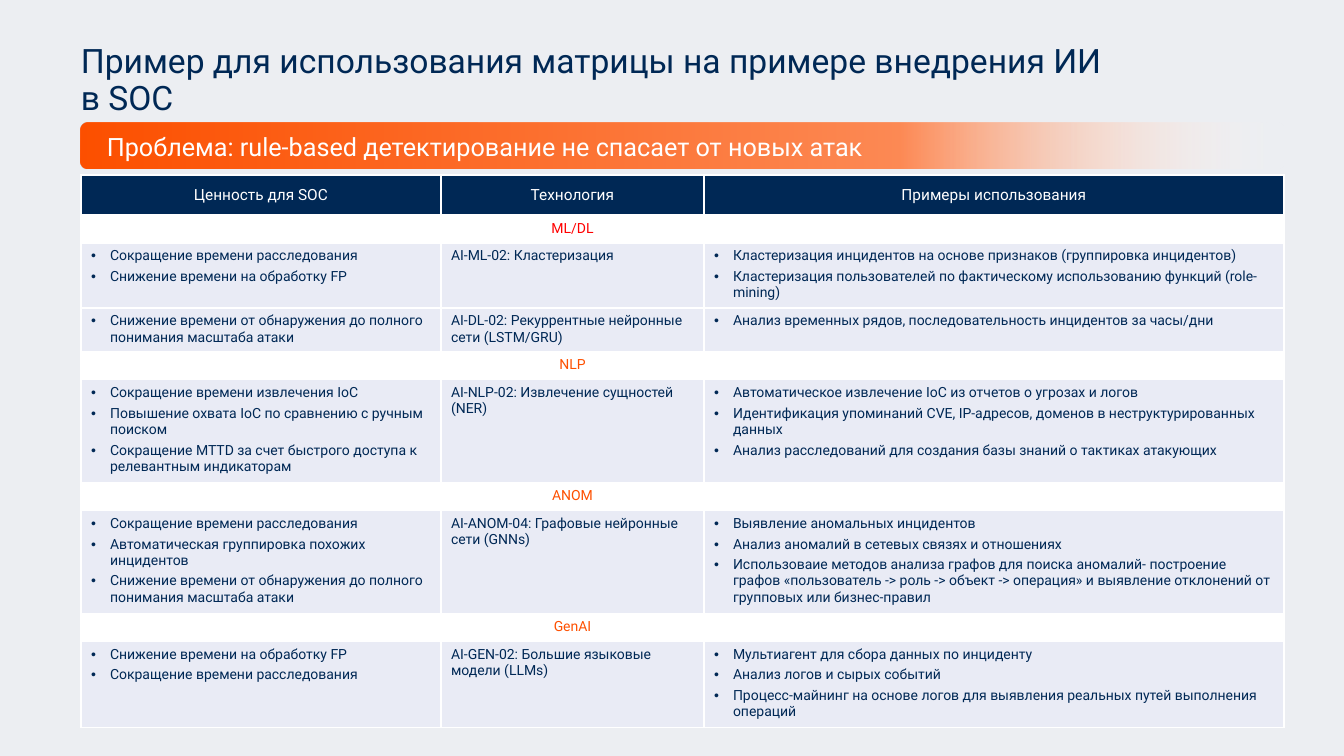
from dataclasses import dataclass

from lxml.etree import SubElement
from pptx import Presentation
from pptx.dml.color import RGBColor
from pptx.enum.shapes import MSO_SHAPE
from pptx.enum.text import MSO_ANCHOR, PP_ALIGN
from pptx.oxml.ns import qn
from pptx.util import Emu, Pt

EMU_PER_PX = 12192000 / 1344


@dataclass(frozen=True)
class Theme:
    font: str = "Roboto"
    page: str = "ECEEF2"
    navy: str = "002855"
    orange: str = "FE5000"
    peach: str = "FE8A55"
    red: str = "FF0000"
    white: str = "FFFFFF"
    row: str = "E9EBF5"
    title_size: int = 24
    banner_size: int = 18
    header_size: int = 11
    body_size: int = 10


THEME = Theme()

TITLE = "Пример для использования матрицы на примере внедрения ИИ в SOC"
PROBLEM = "Проблема: rule-based детектирование не спасает от новых атак"
HEADERS = ["Ценность для SOC", "Технология", "Примеры использования"]

# Each section: label, label colour, rows of (values, technology, examples)
SECTIONS = [
    ("ML/DL", THEME.red, [
        (["Сокращение времени расследования",
          "Снижение времени на обработку FP"],
         "AI-ML-02: Кластеризация",
         ["Кластеризация инцидентов на основе признаков (группировка инцидентов)",
          "Кластеризация пользователей по фактическому использованию функций (role-mining)"]),
        (["Снижение времени от обнаружения до полного понимания масштаба атаки"],
         "AI-DL-02: Рекуррентные нейронные сети (LSTM/GRU)",
         ["Анализ временных рядов, последовательность инцидентов за часы/дни"]),
    ]),
    ("NLP", THEME.orange, [
        (["Сокращение времени извлечения IoC",
          "Повышение охвата IoC по сравнению с ручным поиском",
          "Сокращение MTTD за счет быстрого доступа к релевантным индикаторам"],
         "AI-NLP-02: Извлечение сущностей (NER)",
         ["Автоматическое извлечение IoC из отчетов о угрозах и логов",
          "Идентификация упоминаний CVE, IP-адресов, доменов в неструктурированных данных",
          "Анализ расследований для создания базы знаний о тактиках атакующих"]),
    ]),
    ("ANOM", THEME.orange, [
        (["Сокращение времени расследования",
          "Автоматическая группировка похожих инцидентов",
          "Снижение времени от обнаружения до полного понимания масштаба атаки"],
         "AI-ANOM-04: Графовые нейронные сети (GNNs)",
         ["Выявление аномальных инцидентов",
          "Анализ аномалий в сетевых связях и отношениях",
          "Использоваие методов анализа графов для поиска аномалий- построение графов "
          "«пользователь -> роль -> объект -> операция» и выявление отклонений от "
          "групповых или бизнес-правил"]),
    ]),
    ("GenAI", THEME.orange, [
        (["Снижение времени на обработку FP",
          "Сокращение времени расследования"],
         "AI-GEN-02: Большие языковые модели (LLMs)",
         ["Мультиагент для сбора данных по инциденту",
          "Анализ логов и сырых событий",
          "Процесс-майнинг на основе логов для выявления реальных путей выполнения операций"]),
    ]),
]
COLUMN_WIDTHS = [360, 263, 580]
ROW_HEIGHTS = [41, 27, 65, 43, 28, 103, 28, 101, 28, 85]


def px(value):
    return Emu(round(value * EMU_PER_PX))


def rgb(color):
    return RGBColor.from_string(color)


def format_text(frame, size, color):
    for para in frame.paragraphs:
        for span in para.runs:
            span.font.name = THEME.font
            span.font.size = Pt(size)
            span.font.bold = False
            span.font.color.rgb = rgb(color)


def add_label(page, left, top, width, height, text, size, color):
    box = page.shapes.add_textbox(px(left), px(top), px(width), px(height))
    frame = box.text_frame
    frame.word_wrap = True
    frame.text = text
    format_text(frame, size, color)
    return box


def add_banner(page, left, top, width, height):
    banner = page.shapes.add_shape(
        MSO_SHAPE.ROUNDED_RECTANGLE, px(left), px(top), px(width), px(height))
    banner.adjustments[0] = 0.15
    banner.shadow.inherit = False
    banner.line.fill.background()
    banner.fill.gradient()
    banner.fill.gradient_angle = 0
    # Three stops, the last one transparent
    stops = banner._element.spPr.find(qn("a:gradFill")).find(qn("a:gsLst"))
    for stop in list(stops):
        stops.remove(stop)
    for percent, color, alpha in [(0, THEME.orange, 100), (68, THEME.peach, 100),
                                  (100, THEME.white, 0)]:
        stop = SubElement(stops, qn("a:gs"), pos=str(percent * 1000))
        tint = SubElement(stop, qn("a:srgbClr"), val=color)
        SubElement(tint, qn("a:alpha"), val=str(alpha * 1000))


def style_cell(cell, fill, top=1, bottom=1):
    properties = cell._tc.get_or_add_tcPr()
    for side, points in [("L", 1), ("R", 1), ("T", top), ("B", bottom)]:
        line = SubElement(properties, qn(f"a:ln{side}"), w=str(Pt(points)))
        solid = SubElement(line, qn("a:solidFill"))
        SubElement(solid, qn("a:srgbClr"), val=THEME.white)
    cell.fill.solid()
    cell.fill.fore_color.rgb = rgb(fill)


def fill_cell(cell, text, size, color, align=PP_ALIGN.LEFT):
    frame = cell.text_frame
    frame.text = text
    for para in frame.paragraphs:
        para.alignment = align
        if not text:
            SubElement(para._p, qn("a:endParaRPr"), sz=str(size * 100))
    format_text(frame, size, color)


def add_bullets(cell):
    for index, para in enumerate(cell.text_frame.paragraphs):
        properties = para._p.get_or_add_pPr()
        properties.set("marL", str(px(19)))
        properties.set("indent", str(px(-19)))
        SubElement(properties, qn("a:buFont"), typeface="Arial")
        SubElement(properties, qn("a:buChar"), char="•")
        if index:
            para.space_before = Pt(3)


def add_matrix(page, left, top):
    table = page.shapes.add_table(
        len(ROW_HEIGHTS), len(COLUMN_WIDTHS), px(left), px(top),
        px(sum(COLUMN_WIDTHS)), px(sum(ROW_HEIGHTS))).table
    table.horz_banding = False
    for column, width in zip(table.columns, COLUMN_WIDTHS):
        column.width = px(width)
    for row, height in zip(table.rows, ROW_HEIGHTS):
        row.height = px(height)

    # Header row
    rows = iter(table.rows)
    for cell, text in zip(next(rows).cells, HEADERS):
        style_cell(cell, THEME.navy, bottom=3)
        fill_cell(cell, text, THEME.header_size, THEME.white, PP_ALIGN.CENTER)
        cell.vertical_anchor = MSO_ANCHOR.MIDDLE

    # Section labels, each followed by its content rows
    for number, (label, color, entries) in enumerate(SECTIONS):
        for cell, text in zip(next(rows).cells, ["", label, ""]):
            style_cell(cell, THEME.white, top=1 if number else 3)
            fill_cell(cell, text, THEME.body_size, color, PP_ALIGN.CENTER)
        for values, technology, examples in entries:
            cells = list(next(rows).cells)
            texts = ["\n".join(values), technology, "\n".join(examples)]
            for cell, text in zip(cells, texts):
                style_cell(cell, THEME.row)
                fill_cell(cell, text, THEME.body_size, THEME.navy)
            add_bullets(cells[0])
            add_bullets(cells[2])


def main():
    deck = Presentation()
    deck.slide_width, deck.slide_height = px(1344), px(756)
    page = deck.slides.add_slide(deck.slide_layouts[6])
    page.background.fill.solid()
    page.background.fill.fore_color.rgb = rgb(THEME.page)

    # Title
    title = add_label(page, 71, 40, 1043, 67, TITLE, THEME.title_size, THEME.navy)
    title.text_frame.paragraphs[0].line_spacing = 0.9

    # Problem banner
    add_banner(page, 81, 123, 1203, 46)
    add_label(page, 97, 126, 1067, 40, PROBLEM, THEME.banner_size, THEME.white)

    # Matrix
    add_matrix(page, 81, 175)
    deck.save("out.pptx")


if __name__ == "__main__":
    main()
